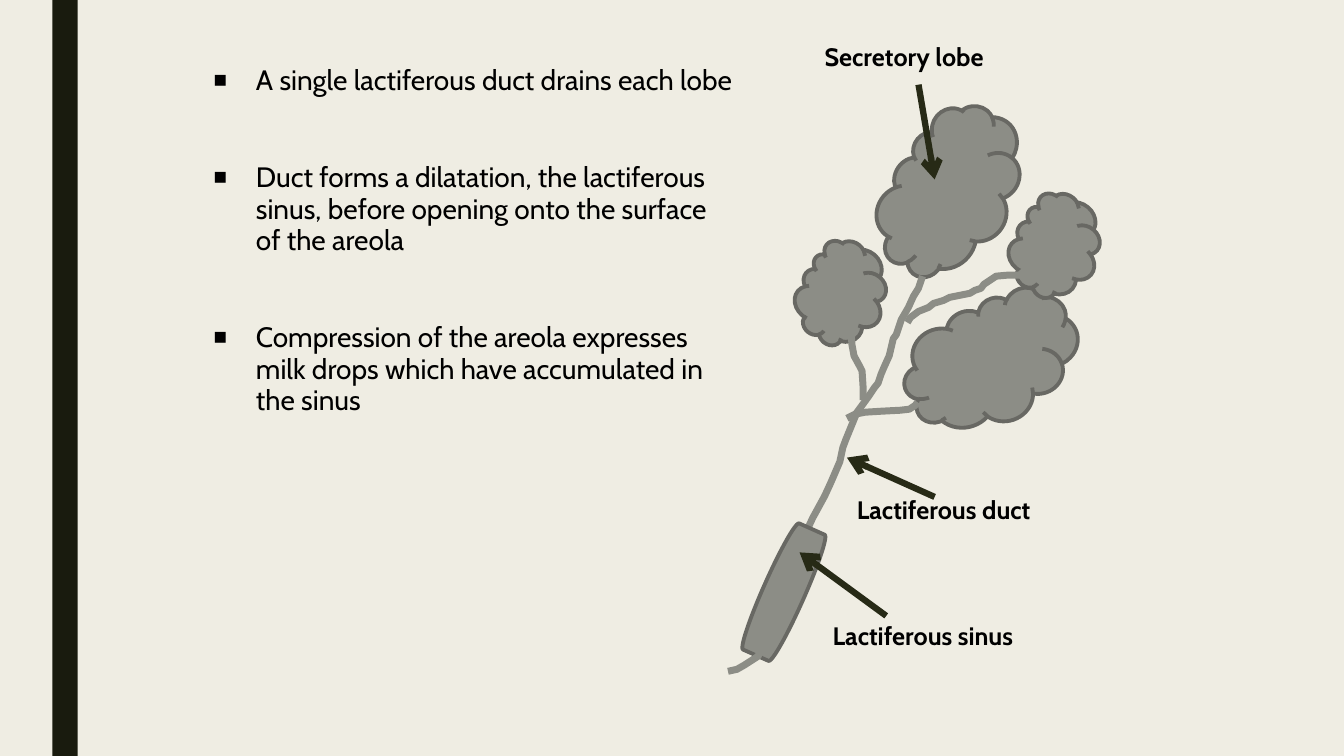
from lxml import etree
from pptx import Presentation
from pptx.dml.color import RGBColor
from pptx.enum.shapes import MSO_CONNECTOR, MSO_SHAPE
from pptx.enum.text import MSO_AUTO_SIZE, PP_ALIGN
from pptx.oxml.ns import qn
from pptx.util import Inches, Pt

RECTANGLE = MSO_SHAPE.RECTANGLE
CLOUD = MSO_SHAPE.CLOUD
TERMINATOR = MSO_SHAPE.FLOWCHART_TERMINATOR
STRAIGHT = MSO_CONNECTOR.STRAIGHT
FIT_SHAPE = MSO_AUTO_SIZE.SHAPE_TO_FIT_TEXT
LEFT = PP_ALIGN.LEFT

CREAM = RGBColor(0xEF, 0xED, 0xE3)
DARK_OLIVE = RGBColor(0x19, 0x1B, 0x0E)
ARROW_OLIVE = RGBColor(0x27, 0x2A, 0x16)
TISSUE_GREY = RGBColor(0x8C, 0x8D, 0x86)
OUTLINE_GREY = RGBColor(0x68, 0x68, 0x63)
BLACK = RGBColor(0, 0, 0)
FONT = "Cabin"

BULLETS = [
    "A single lactiferous duct drains each lobe",
    "Duct forms a dilatation, the lactiferous sinus, before opening onto the surface of the areola",
    "Compression of the areola expresses milk drops which have accumulated in the sinus",
]
BULLET_BOX = (2.02, 0.6, 5.35, 5.15)
BULLET_INDENT = 0.42
BULLET_GAP = 44.6  # points before every bullet after the first

SIDE_BAR = (0.52, 0, 0.25, 7.5)

# (left, top, width, height), rotation
LOBES = [
    ((8.54, 1.31, 1.79, 1.21), 310),
    ((8.94, 2.99, 1.79, 1.21), 341),
    ((9.97, 2.01, 1.01, 0.88), 310),
    ((7.85, 2.48, 1.01, 0.88), 310),
]
SINUS = ((7.57, 5.19, 0.41, 1.37), 24)

LEFT_BRANCH = [(8.44, 3.29), (8.45, 3.42), (8.47, 3.53), (8.53, 3.64),
               (8.55, 3.68), (8.56, 3.84), (8.56, 3.97)]
MAIN_DUCT = [(9.15, 2.74), (9.11, 2.86), (9.06, 2.94), (9.01, 3.05), (8.94, 3.17),
             (8.91, 3.26), (8.89, 3.32), (8.86, 3.36), (8.82, 3.53), (8.77, 3.64),
             (8.74, 3.71), (8.71, 3.8), (8.67, 3.85), (8.61, 3.94), (8.5, 4.09),
             (8.39, 4.36), (8.36, 4.44), (8.33, 4.58), (8.24, 4.79), (8.18, 4.92),
             (8.12, 5.03), (8.06, 5.14), (8, 5.27), (7.94, 5.44), (7.89, 5.55)]
UPPER_BRANCH = [(9, 3.2), (9.03, 3.15), (9.11, 3.09), (9.21, 3.05), (9.26, 3.01),
                (9.36, 2.98), (9.42, 2.95), (9.62, 2.91), (9.67, 2.88), (9.73, 2.86),
                (9.76, 2.82), (9.88, 2.74), (9.99, 2.73), (10.11, 2.73), (10.17, 2.68)]
LOWER_BRANCH = [(8.4, 4.15), (8.48, 4.11), (8.58, 4.09), (8.74, 4.08), (8.93, 4.07),
                (9.02, 4.06), (9.08, 4.02), (9.1, 3.99)]
OUTLET = [(7.93, 5.48), (7.81, 5.59), (7.68, 5.78), (7.62, 6.04), (7.57, 6.36),
          (7.52, 6.51), (7.38, 6.6), (7.31, 6.64), (7.22, 6.66)]

LABEL_SIZE = (2.52, 0.4)
# text, label corner, arrow start, arrow tip
LABELS = [
    ("Secretory lobe", (8.08, 0.36), (9.11, 0.84), (9.27, 1.78)),
    ("Lactiferous sinus", (8.16, 6.11), (8.79, 6.11), (7.93, 5.48)),
    ("Lactiferous duct", (8.4, 4.85), (9.27, 4.93), (8.4, 4.54)),
]


def emu(values):
    return [Inches(value) for value in values]


def add_solid(slide, kind, box, fill, outline=None, rotation=0):
    shape = slide.shapes.add_shape(kind, *emu(box))
    shape.shadow.inherit = False
    shape.rotation = rotation
    shape.fill.solid()
    shape.fill.fore_color.rgb = fill
    if outline is None:
        shape.line.fill.background()
    else:
        shape.line.color.rgb = outline
        shape.line.width = Pt(2.75)


def add_duct(slide, points):
    start, *rest = [emu(point) for point in points]
    builder = slide.shapes.build_freeform(*start)
    builder.add_line_segments(rest, close=False)
    shape = builder.convert_to_shape()
    shape.shadow.inherit = False
    shape.fill.background()
    shape.line.color.rgb = TISSUE_GREY
    shape.line.width = Pt(5)


def add_arrow(slide, start, tip):
    arrow = slide.shapes.add_connector(STRAIGHT, *emu(start + tip))
    arrow.line.color.rgb = ARROW_OLIVE
    arrow.line.width = Pt(4.5)
    etree.SubElement(arrow.line._get_or_add_ln(), qn("a:tailEnd"), type="arrow")
    etree.SubElement(arrow._element.spPr, qn("a:effectLst"))


def style_runs(paragraph, size, bold=False):
    paragraph.alignment = LEFT
    for run in paragraph.runs:
        run.font.name = FONT
        run.font.size = Pt(size)
        run.font.bold = bold
        run.font.color.rgb = BLACK


def add_label(slide, text, corner):
    text_frame = slide.shapes.add_textbox(*emu(corner + LABEL_SIZE)).text_frame
    text_frame.word_wrap = True
    text_frame.auto_size = FIT_SHAPE
    text_frame.text = text
    style_runs(text_frame.paragraphs[0], 18, bold=True)


def add_square_bullet(paragraph):
    properties = paragraph._p.get_or_add_pPr()
    properties.set("marL", str(Inches(BULLET_INDENT)))
    properties.set("indent", str(-Inches(BULLET_INDENT)))
    etree.SubElement(properties, qn("a:buSzPct"), val="80000")
    etree.SubElement(properties, qn("a:buFont"), typeface="Arial")
    etree.SubElement(properties, qn("a:buChar"), char="■")


def add_bullets(slide):
    text_frame = slide.shapes.add_textbox(*emu(BULLET_BOX)).text_frame
    text_frame.word_wrap = True
    text_frame.text = "\n".join(BULLETS)
    for index, paragraph in enumerate(text_frame.paragraphs):
        style_runs(paragraph, 20)
        paragraph.line_spacing = 0.94
        paragraph.space_before = Pt(BULLET_GAP if index else 0)
        paragraph.space_after = Pt(2)
        add_square_bullet(paragraph)


def main():
    presentation = Presentation()
    presentation.slide_width = Inches(13.33)
    presentation.slide_height = Inches(7.5)
    slide = presentation.slides.add_slide(presentation.slide_layouts[6])
    slide.background.fill.solid()
    slide.background.fill.fore_color.rgb = CREAM

    add_solid(slide, RECTANGLE, SIDE_BAR, DARK_OLIVE)
    add_bullets(slide)
    for box, rotation in LOBES:
        add_solid(slide, CLOUD, box, TISSUE_GREY, OUTLINE_GREY, rotation)
    for points in (LEFT_BRANCH, MAIN_DUCT, UPPER_BRANCH, LOWER_BRANCH):
        add_duct(slide, points)
    sinus_box, sinus_rotation = SINUS
    add_solid(slide, TERMINATOR, sinus_box, TISSUE_GREY, OUTLINE_GREY, sinus_rotation)
    add_duct(slide, OUTLET)
    for text, corner, start, tip in LABELS:
        add_arrow(slide, start, tip)
        add_label(slide, text, corner)

    presentation.save("out.pptx")


if __name__ == "__main__":
    main()
